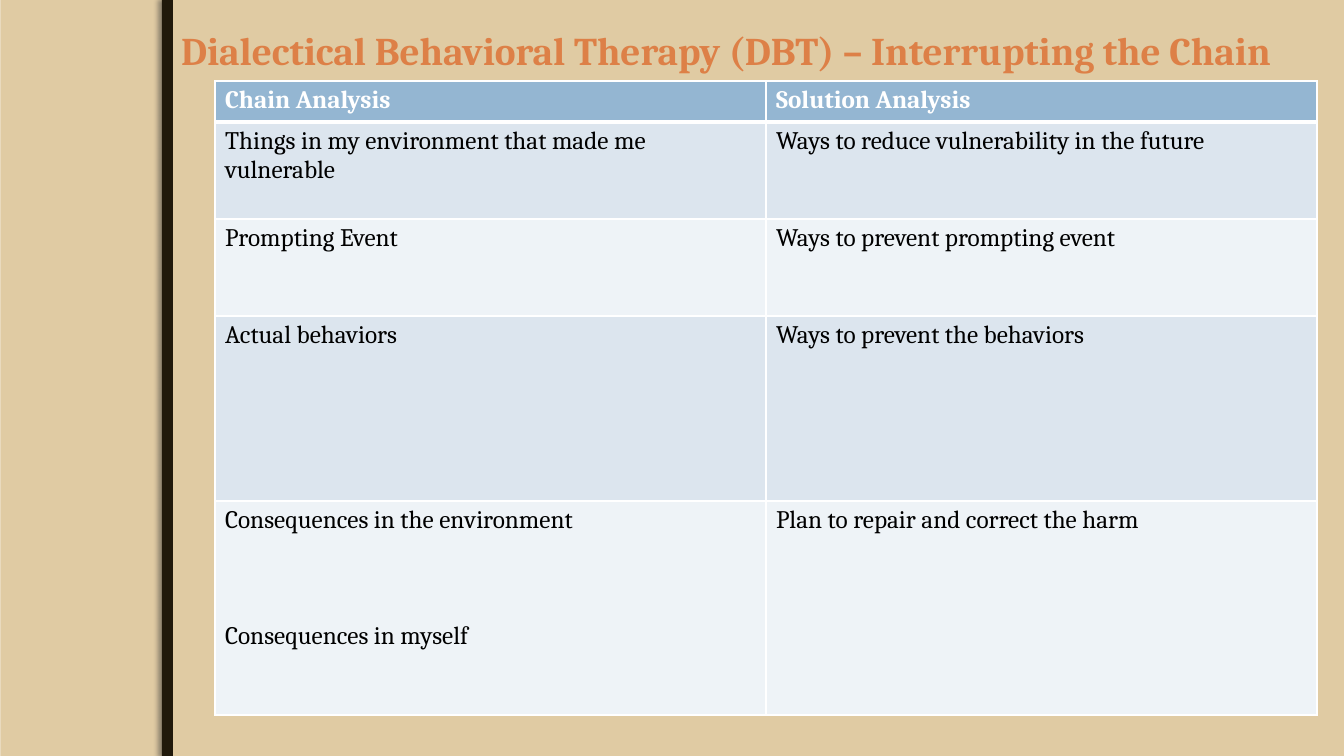
"""Build a slide that sets chain analysis beside solution analysis."""
from dataclasses import dataclass

from lxml import etree
from pptx import Presentation
from pptx.dml.color import RGBColor
from pptx.enum.shapes import MSO_SHAPE
from pptx.enum.text import MSO_ANCHOR, MSO_AUTO_SIZE, PP_ALIGN
from pptx.oxml.ns import qn
from pptx.util import Emu, Pt

RECT = MSO_SHAPE.RECTANGLE
MIDDLE = MSO_ANCHOR.MIDDLE
LEFT = PP_ALIGN.LEFT
NO_FIT = MSO_AUTO_SIZE.NONE

TITLE = "Dialectical Behavioral Therapy (DBT) – Interrupting the Chain"
ROWS = [
    (41, ["Chain Analysis"], ["Solution Analysis"]),
    (97, ["Things in my environment that made me vulnerable"],
     ["Ways to reduce vulnerability in the future"]),
    (97, ["Prompting Event"], ["Ways to prevent prompting event"]),
    (185, ["Actual behaviors"], ["Ways to prevent the behaviors"]),
    (214, ["Consequences in the environment", "Consequences in myself"],
     ["Plan to repair and correct the harm"]),
]


@dataclass(frozen=True)
class Theme:
    """Colours, font and type sizes."""
    font: str = "Cambria"
    back: str = "EBDDC3"
    panel: str = "E0CBA3"
    bar: str = "20190B"
    shade: str = "766E60"
    title: str = "DD8047"
    head: str = "94B6D2"
    bands: tuple = ("EEF3F7", "DCE5EE")
    light: str = "FFFFFF"
    dark: str = "000000"
    big: int = 28
    small: int = 18
    gap: int = 62


LOOK = Theme()
WIDE, HIGH = 1344, 756
SCALE = 12192000 / WIDE
COL = 551


def px(num):
    return Emu(round(num * SCALE))


def paint(fill, color):
    fill.solid()
    fill.fore_color.rgb = RGBColor.from_string(color)


def write(para, text, size, color, bold):
    run = para.add_run()
    run.text = text
    run.font.name = LOOK.font
    run.font.size = Pt(size)
    run.font.bold = bold
    run.font.color.rgb = RGBColor.from_string(color)


def add_rect(slide, box, color):
    shape = slide.shapes.add_shape(RECT, *map(px, box))
    paint(shape.fill, color)
    shape.line.fill.background()
    shape.shadow.inherit = False
    return shape


def cast(shape):
    list_ = shape._element.spPr.find(qn("a:effectLst"))
    shade = etree.SubElement(list_, qn("a:outerShdw"), blurRad=str(Pt(3)),
                             dist=str(Pt(3)), dir="10800000", rotWithShape="0")
    color = etree.SubElement(shade, qn("a:srgbClr"), val=LOOK.shade)
    etree.SubElement(color, qn("a:alpha"), val="75000")


def edge(cell, row):
    props = cell._tc.get_or_add_tcPr()
    top = 3 if row == 1 else 1
    base = 3 if row == 0 else 1
    for side, width in (("L", 1), ("R", 1), ("T", top), ("B", base)):
        line = etree.SubElement(props, qn(f"a:ln{side}"), w=str(Pt(width)))
        fill = etree.SubElement(line, qn("a:solidFill"))
        etree.SubElement(fill, qn("a:srgbClr"), val=LOOK.light)


def fill_cell(cell, row, lines):
    head = row == 0
    edge(cell, row)
    paint(cell.fill, LOOK.head if head else LOOK.bands[row % 2])
    for num, text in enumerate(lines):
        frame = cell.text_frame
        para = frame.add_paragraph() if num else frame.paragraphs[0]
        if num:
            para.space_before = Pt(LOOK.gap)
        write(para, text, LOOK.small, LOOK.light if head else LOOK.dark, head)


def add_title(slide):
    title = slide.shapes.title
    title.left, title.top, title.width, title.height = map(px, (171, -13, 1141, 126))
    frame = title.text_frame
    frame.auto_size = NO_FIT
    frame.word_wrap = True
    frame.vertical_anchor = MIDDLE
    para = frame.paragraphs[0]
    para.alignment = LEFT
    write(para, TITLE, LOOK.big, LOOK.title, True)
    slide.shapes._spTree.append(title._element)


def add_grid(slide):
    total = sum(row[0] for row in ROWS)
    table = slide.shapes.add_table(
        len(ROWS), 2, px(215), px(81), px(2 * COL), px(total)).table
    for col in table.columns:
        col.width = px(COL)
    for row, (high, *cells) in enumerate(ROWS):
        table.rows[row].height = px(high)
        for col, lines in enumerate(cells):
            fill_cell(table.cell(row, col), row, lines)


def main():
    deck = Presentation()
    deck.slide_width, deck.slide_height = px(WIDE), px(HIGH)
    slide = deck.slides.add_slide(deck.slide_layouts[5])
    paint(slide.background.fill, LOOK.back)
    add_rect(slide, (1, 0, WIDE - 1, HIGH), LOOK.panel)
    cast(add_rect(slide, (162, 0, 11, HIGH), LOOK.bar))
    add_title(slide)
    add_grid(slide)
    deck.save("out.pptx")


if __name__ == "__main__":
    main()
